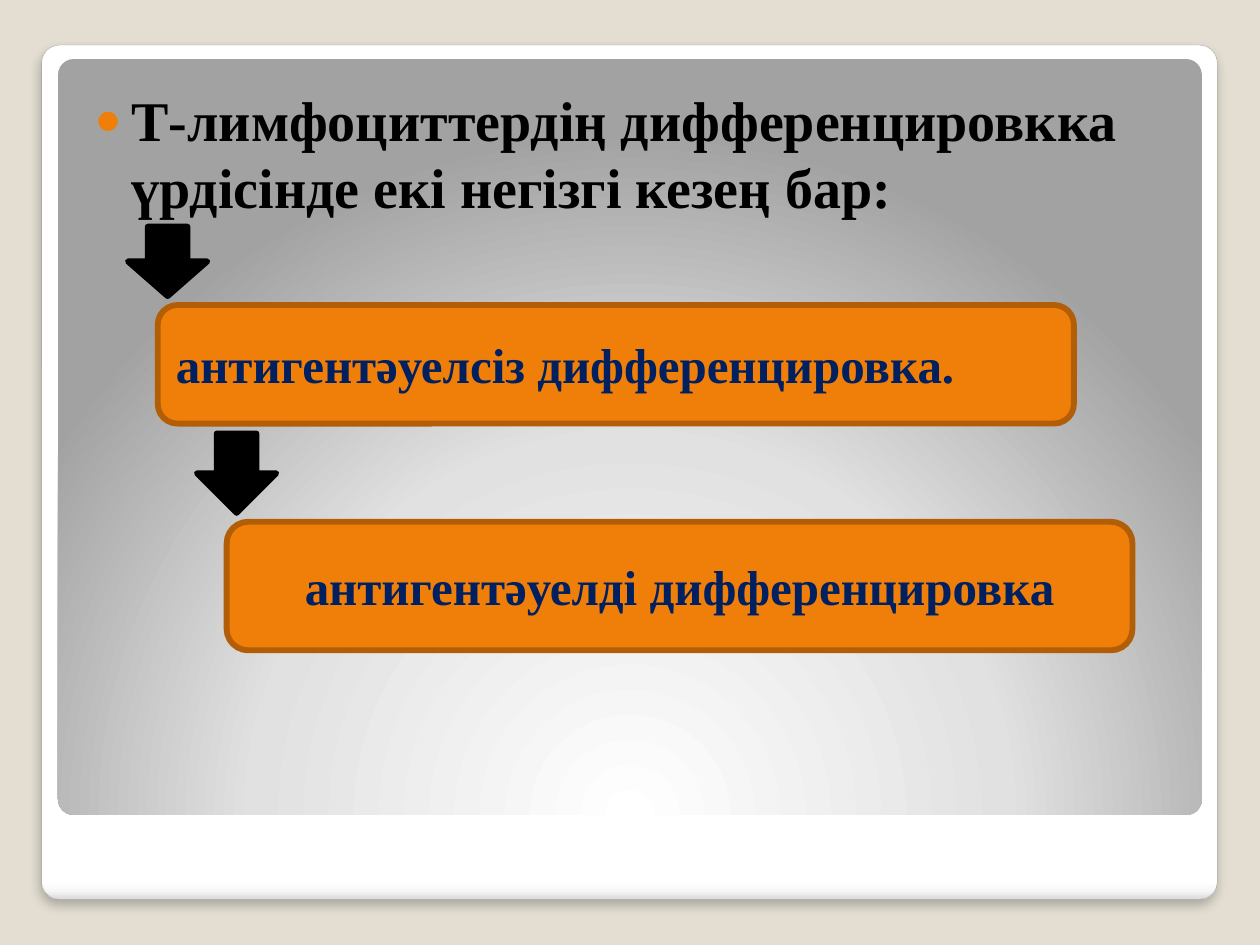
import pptx
import pptx.util
import pptx.dml.color
import pptx.enum.shapes
import pptx.enum.text
import pptx.oxml
import pptx.oxml.ns
from dataclasses import dataclass

Cm, Pt = pptx.util.Cm, pptx.util.Pt
Kind = pptx.enum.shapes.MSO_SHAPE
Align = pptx.enum.text.PP_ALIGN
Anchor = pptx.enum.text.MSO_ANCHOR
NS = pptx.oxml.ns.nsdecls("a")


@dataclass(frozen=True)
class Theme:
    back: str = "E3DED1"
    edge: str = "A4A4A4"
    accent: str = "F07F09"
    rim: str = "B25E07"
    ink: str = "000000"
    navy: str = "002060"
    font: str = "Times New Roman"
    head: int = 32
    label: int = 28
    stroke: float = 3.35


T = Theme()


def color(code):
    return pptx.dml.color.RGBColor.from_string(code)


def paint(fill, code):
    fill.solid()
    fill.fore_color.rgb = color(code)


def write(para, text, size, code):
    """Add one bold run to a paragraph."""
    run = para.add_run()
    run.text = text
    style = {"name": T.font, "size": Pt(size), "bold": True}
    for key, value in style.items():
        setattr(run.font, key, value)
    run.font.color.rgb = color(code)


def draw(slide, kind, box, fill=None, line=None, width=0):
    """Add a flat shape; box is left, top, width, height in cm."""
    shape = slide.shapes.add_shape(kind, *map(Cm, box))
    shape.shadow.inherit = False
    if fill:
        paint(shape.fill, fill)
    else:
        shape.fill.background()
    if line:
        paint(shape.line.fill, line)
        shape.line.width = Pt(width)
    else:
        shape.line.fill.background()
    return shape


def blend(shape, stops, course):
    """Swap the empty fill of a shape for a gradient."""
    marks = "".join(
        f'<a:gs pos="{pos * 1000}"><a:srgbClr val="{code}"/></a:gs>'
        for pos, code in stops)
    grad = pptx.oxml.parse_xml(
        f'<a:gradFill {NS} rotWithShape="1"><a:gsLst>{marks}</a:gsLst>'
        f'{course}</a:gradFill>')
    props = shape._element.spPr
    props.replace(props.find(pptx.oxml.ns.qn("a:noFill")), grad)


def frame(slide, box):
    """White card with a grey inner panel, behind everything else."""
    left, top, width, height = box
    card = draw(slide, Kind.ROUNDED_RECTANGLE, box, line=T.edge, width=0.16)
    blend(card, [(0, "FFFFFF"), (98, "FFFFFF"), (99, "F7F7F7"), (100, "DADADA")],
          '<a:lin ang="5400000" scaled="0"/>')
    shade = pptx.oxml.parse_xml(
        f'<a:outerShdw {NS} blurRad="{Pt(6)}" dist="{Pt(4)}" dir="5400000" '
        f'algn="tl" rotWithShape="0"><a:srgbClr val="{T.ink}">'
        '<a:alpha val="25000"/></a:srgbClr></a:outerShdw>')
    card._element.spPr.find(pptx.oxml.ns.qn("a:effectLst")).append(shade)

    panel = draw(slide, Kind.ROUNDED_RECTANGLE,
                 (left + 0.33, top + 0.28, width - 0.64, height - 1.98))
    blend(panel, [(0, "FFFFFF"), (55, "E1E1E1"), (100, "A2A2A2")],
          '<a:path path="circle"><a:fillToRect l="50000" t="175000" '
          'r="50000" b="-75000"/></a:path>')
    for place, shape in enumerate((card, panel), 2):
        shape.adjustments[0] = 0.021
        slide.shapes._spTree.insert(place, shape._element)


def heading(slide, box, text):
    """Bulleted statement in the body placeholder."""
    body = slide.placeholders[1]
    for key, value in zip(("left", "top", "width", "height"), box):
        setattr(body, key, Cm(value))
    form = {"margin_left": Cm(0.51), "margin_top": Cm(0.25),
            "margin_right": Cm(0.25), "margin_bottom": Cm(0.13),
            "vertical_anchor": Anchor.TOP, "word_wrap": True,
            "auto_size": pptx.enum.text.MSO_AUTO_SIZE.NONE}
    for key, value in form.items():
        setattr(body.text_frame, key, value)
    para = body.text_frame.paragraphs[0]
    para.space_before = Pt(2.5)
    write(para, text, T.head, T.ink)
    props = para._p.get_or_add_pPr()
    props.set("marL", str(Cm(0.74)))
    props.set("indent", str(-Cm(0.74)))
    for part in (f'<a:buClr {NS}><a:srgbClr val="{T.accent}"/></a:buClr>',
                 f'<a:buSzPct {NS} val="80000"/>',
                 f'<a:buFont {NS} typeface="Arial"/>',
                 f'<a:buChar {NS} char="●"/>'):
        props.append(pptx.oxml.parse_xml(part))


def stage(slide, box, text, align, drop):
    """Labelled box with a down arrow of height drop above its left end."""
    left, top, width, height = box
    card = draw(slide, Kind.ROUNDED_RECTANGLE, box, T.accent, T.rim, T.stroke)
    card.text_frame.word_wrap = True
    card.text_frame.vertical_anchor = Anchor.MIDDLE
    para = card.text_frame.paragraphs[0]
    para.alignment = align
    write(para, text, T.label, T.navy)
    draw(slide, Kind.DOWN_ARROW, (left - 0.6, top - drop - 0.18, 1.6, drop),
         T.ink, T.ink, T.stroke)


def steps(slide, box):
    """The two stages, each one set further in."""
    left, top = box[:2]
    stage(slide, (left + 1.78, top + 4.68, 18.47, 2.39),
          "антигентәуелсіз дифференцировка.", Align.LEFT, 1.4)
    stage(slide, (left + 3.17, top + 9.05, 18.26, 2.59),
          "антигентәуелді дифференцировка", Align.CENTER, 1.6)


def main():
    deck = pptx.Presentation()
    deck.slide_width, deck.slide_height = Cm(25.4), Cm(19.05)
    slide = deck.slides.add_slide(deck.slide_layouts[1])
    title = slide.shapes.title._element
    title.getparent().remove(title)
    paint(slide.background.fill, T.back)

    area = (1.4, 1.47, 22.73, 11.63)
    frame(slide, (0.84, 0.91, 23.7, 17.22))
    heading(slide, area,
            "Т-лимфоциттердің дифференцировкка үрдісінде екі негізгі кезең бар:")
    steps(slide, area)
    deck.save("out.pptx")


if __name__ == "__main__":
    main()
